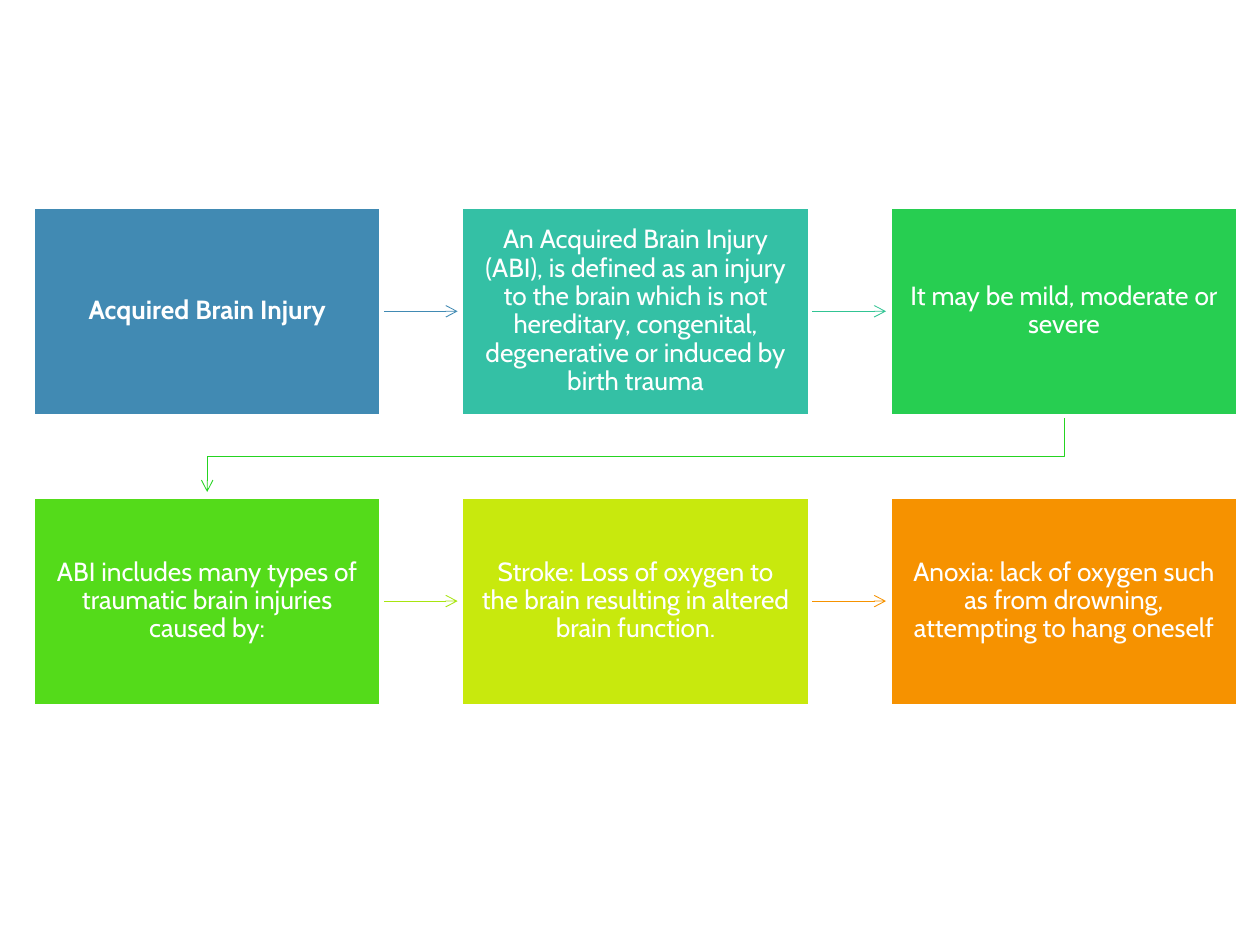
from dataclasses import dataclass

from lxml.etree import SubElement
from pptx import Presentation
from pptx.dml.color import RGBColor as Rgb
from pptx.enum.shapes import MSO_CONNECTOR as Link, MSO_SHAPE as Kind
from pptx.enum.text import MSO_ANCHOR as Anchor, PP_ALIGN as Align
from pptx.oxml.ns import qn
from pptx.util import Pt


@dataclass(frozen=True)
class Theme:
    font: str = "Cabin"
    size: float = 15
    white: str = "FFFFFF"
    fills: tuple = ("418AB3", "34C0A5", "27CE51", "54DB1A", "C8E90D", "F69200")
    lines: tuple = ("418AB3", "31C493", "25D421", "A8E510", "F69200")


THEME = Theme()
COLS = 3
LEFT, TOP = 18.7, 118.1
WIDE, HIGH = 199.4, 119.6
STEP, DROP = 244.8, 165.6
REACH, BEND = 43.4, 23.2
INSET = 10

STEPS = (
    "Acquired Brain Injury",
    "An Acquired Brain Injury (ABI), is defined as an injury to the brain "
    "which is not hereditary, congenital, degenerative or induced by birth trauma",
    "It may be mild, moderate or severe",
    "ABI includes many types of traumatic brain injuries caused by:",
    "Stroke: Loss of oxygen to the brain resulting in altered brain function.",
    "Anoxia: lack of oxygen such as from drowning, attempting to hang oneself",
)


def write(shape, text, bold=False, size=THEME.size, color=THEME.white):
    frame = shape.text_frame
    frame.word_wrap = True
    frame.vertical_anchor = Anchor.MIDDLE
    frame.margin_left = frame.margin_right = Pt(INSET)
    frame.margin_top = frame.margin_bottom = Pt(INSET)
    para = frame.paragraphs[0]
    para.alignment = Align.CENTER
    para.line_spacing = 0.9
    run = para.add_run()
    run.text = text
    font = run.font
    font.name, font.size, font.bold = THEME.font, Pt(size), bold
    font.color.rgb = Rgb.from_string(color)


def corner(index):
    row, col = divmod(index, COLS)
    return LEFT + col * STEP, TOP + row * DROP


def add_box(slide, index, text):
    x, y = corner(index)
    box = slide.shapes.add_shape(Kind.RECTANGLE, Pt(x), Pt(y), Pt(WIDE), Pt(HIGH))
    box.shadow.inherit = False
    box.fill.solid()
    box.fill.fore_color.rgb = Rgb.from_string(THEME.fills[index])
    box.line.color.rgb = Rgb.from_string(THEME.white)
    box.line.width = Pt(2.5)
    write(box, text, bold=index == 0)
    return box


def style(shape, color):
    shape.line.color.rgb = Rgb.from_string(color)
    shape.line.width = Pt(0.5)
    SubElement(shape.line._get_or_add_ln(), qn("a:tailEnd"), type="arrow")
    node = shape._element
    node.getparent().insert(2, node)


def add_arrow(slide, box, index):
    x, y = corner(index)
    start, mid = x + WIDE, y + HIGH / 2
    arrow = slide.shapes.add_connector(
        Link.STRAIGHT, Pt(start), Pt(mid), Pt(start + REACH), Pt(mid))
    arrow.begin_connect(box, 3)
    style(arrow, THEME.lines[index])
    SubElement(arrow._element.spPr, qn("a:effectLst"))


def add_turn(slide, index):
    x, y = corner(index)
    start, base = x + WIDE / 2, y + HIGH
    end = LEFT + WIDE / 2
    path = slide.shapes.build_freeform(Pt(start), Pt(base))
    points = ((start, base + BEND), (end, base + BEND), (end, base + REACH))
    path.add_line_segments([(Pt(a), Pt(b)) for a, b in points], close=False)
    turn = path.convert_to_shape()
    turn.shadow.inherit = False
    turn.fill.background()
    style(turn, THEME.lines[index])


def main():
    deck = Presentation()
    deck.slide_width, deck.slide_height = Pt(720), Pt(540)
    slide = deck.slides.add_slide(deck.slide_layouts[6])
    boxes = [add_box(slide, i, text) for i, text in enumerate(STEPS)]
    for i, box in enumerate(boxes[:-1]):
        if i % COLS == COLS - 1:
            add_turn(slide, i)
        else:
            add_arrow(slide, box, i)
    deck.save("out.pptx")


if __name__ == "__main__":
    main()
